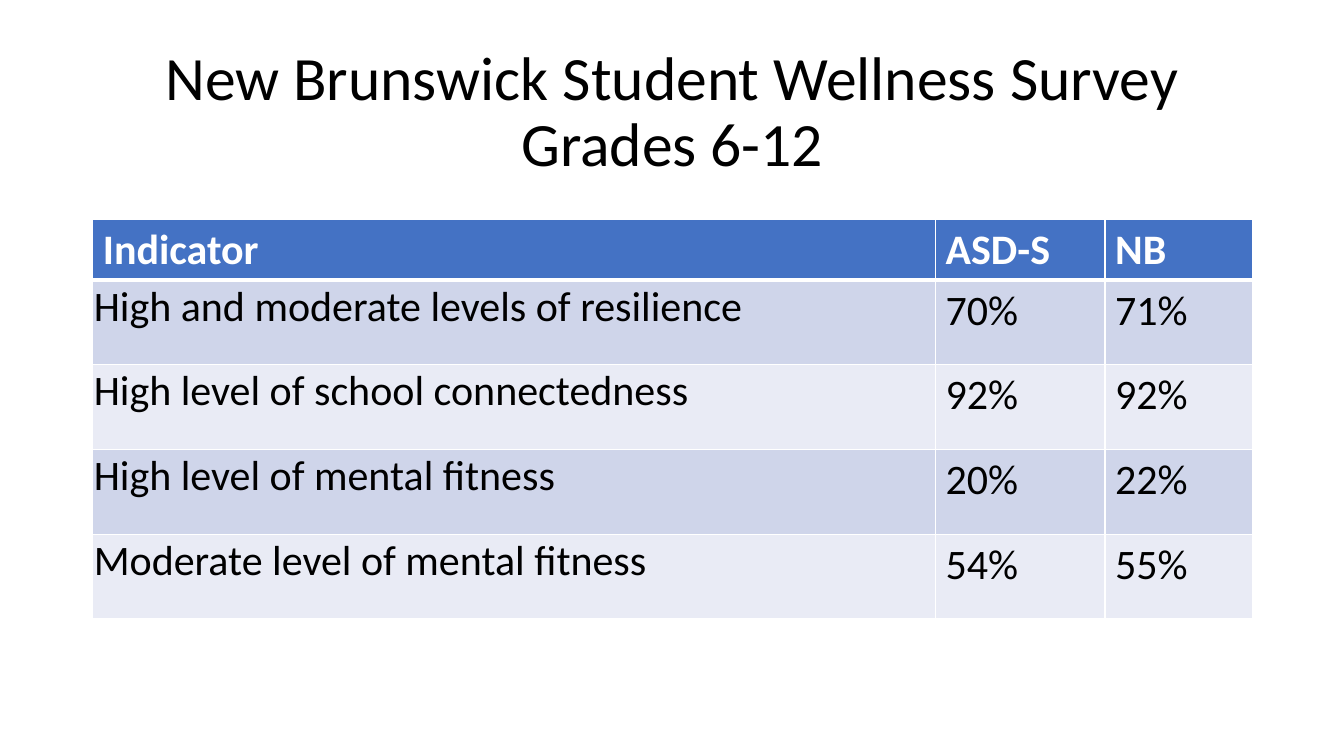
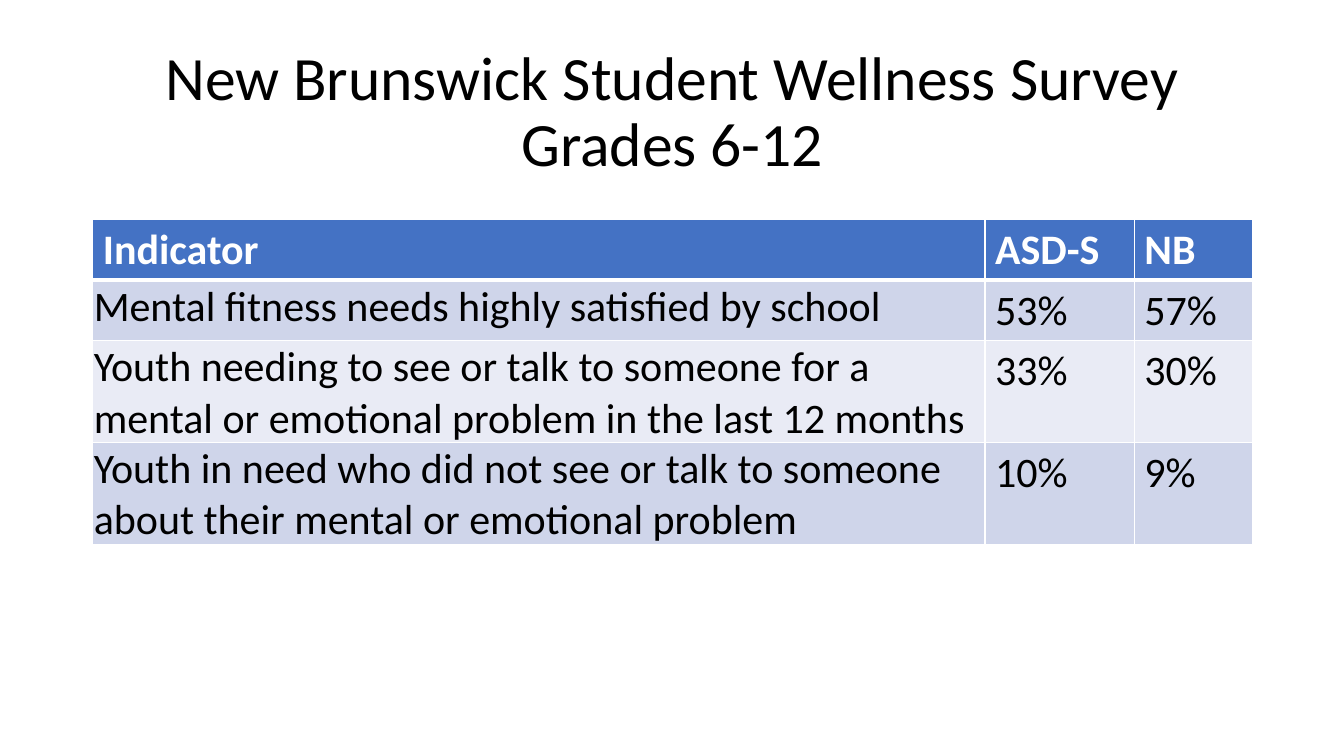
from lxml.etree import SubElement
from pptx import Presentation
from pptx.dml.color import RGBColor
from pptx.enum.text import MSO_ANCHOR, PP_ALIGN
from pptx.oxml.ns import qn
from pptx.util import Inches, Pt

WHITE = RGBColor(0xFF, 0xFF, 0xFF)
BLACK = RGBColor(0, 0, 0)
HEADER_BLUE = RGBColor(0x44, 0x72, 0xC4)
BANDS = RGBColor(0xCF, 0xD5, 0xEA), RGBColor(0xE9, 0xEB, 0xF5)
FONT = "Calibri"
LEFT, WIDTH = 0.92, 11.5

TITLE = "New Brunswick Student Wellness Survey\nGrades 6-12"
HEADER = ("Indicator", "ASD-S", "NB")
SURVEYS = [
    {"cols": (8.36, 1.68, 1.46), "header_height": 0.46, "row_height": 0.84, "rows": [
        ("High and moderate levels of resilience", "70%", "71%"),
        ("High level of school connectedness", "92%", "92%"),
        ("High level of mental fitness", "20%", "22%"),
        ("Moderate level of mental fitness", "54%", "55%"),
    ]},
    {"cols": (8.85, 1.48, 1.17), "header_height": 0.41, "row_height": 0.41, "rows": [
        ("Mental fitness needs highly satisfied by school", "53%", "57%"),
        ("Youth needing to see or talk to someone for a mental or emotional "
         "problem in the last 12 months", "33%", "30%"),
        ("Youth in need who did not see or talk to someone about their mental "
         "or emotional problem", "10%", "9%"),
    ]},
]


def set_font(p, size, color, bold=False):
    p.font.name, p.font.size, p.font.bold = FONT, Pt(size), bold
    p.font.color.rgb = color


def add_title(s):
    tf = s.shapes.add_textbox(Inches(LEFT), Inches(0.4), Inches(WIDTH), Inches(1.45)).text_frame
    tf.word_wrap = True
    tf.vertical_anchor = MSO_ANCHOR.MIDDLE
    p = tf.paragraphs[0]
    p.text = TITLE.replace("\n", "\v")
    p.alignment, p.line_spacing = PP_ALIGN.CENTER, 0.9
    set_font(p, 44, BLACK)


def set_borders(cell, top, bottom):
    tcPr = cell._tc.get_or_add_tcPr()
    for side, width in (("L", 1), ("R", 1), ("T", top), ("B", bottom)):
        ln = SubElement(tcPr, qn(f"a:ln{side}"), w=str(Pt(width)))
        SubElement(SubElement(ln, qn("a:solidFill")), qn("a:srgbClr"), val=str(WHITE))


def style_cell(cell, row, col):
    is_header = row == 0
    set_borders(cell, 3 if row == 1 else 1, 3 if is_header else 1)
    cell.fill.solid()
    cell.fill.fore_color.rgb = HEADER_BLUE if is_header else BANDS[(row - 1) % 2]
    if col == 0 and not is_header:
        cell.margin_left = cell.margin_top = cell.margin_right = Inches(0.01)
        cell.margin_bottom = 0
    set_font(cell.text_frame.paragraphs[0], 30, WHITE if is_header else BLACK, is_header)


def add_survey_table(s, survey):
    rows = [HEADER, *survey["rows"]]
    heights = [survey["header_height"]] + [survey["row_height"]] * len(survey["rows"])
    table = s.shapes.add_table(len(rows), len(HEADER), Inches(LEFT), Inches(2.18),
                               Inches(WIDTH), Inches(sum(heights))).table
    for column, width in zip(table.columns, survey["cols"]):
        column.width = Inches(width)
    for r, (values, height) in enumerate(zip(rows, heights)):
        table.rows[r].height = Inches(height)
        for c, value in enumerate(values):
            cell = table.cell(r, c)
            cell.text = value
            style_cell(cell, r, c)


def main():
    prs = Presentation()
    prs.slide_width, prs.slide_height = Inches(13.33), Inches(7.5)
    for survey in SURVEYS:
        s = prs.slides.add_slide(prs.slide_layouts[6])
        add_title(s)
        add_survey_table(s, survey)
    prs.save("out.pptx")


if __name__ == "__main__":
    main()
